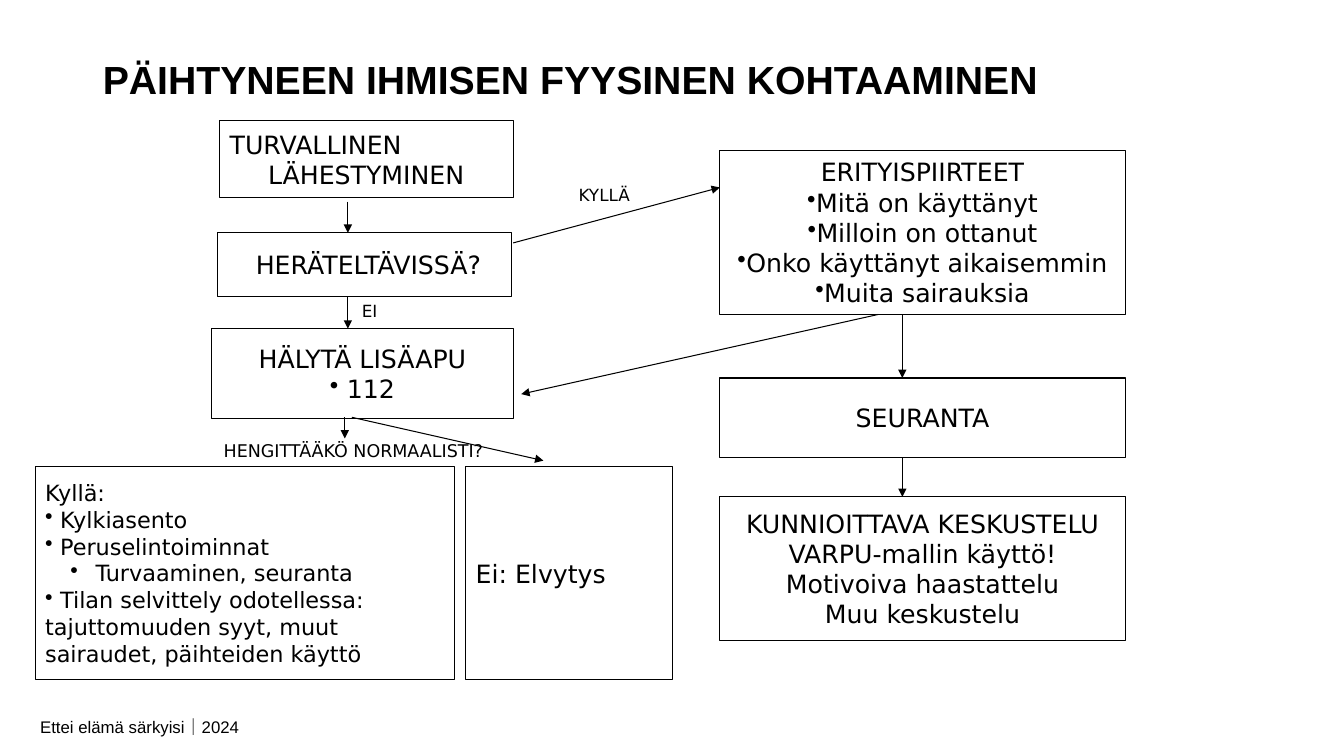
from lxml import etree
from pptx import Presentation
from pptx.dml.color import RGBColor
from pptx.enum import shapes, text
from pptx.oxml.ns import qn
from pptx.util import Inches, Pt

BLACK, WHITE = "000000", "FFFFFF"
LEFT, MID = text.PP_ALIGN.LEFT, text.PP_ALIGN.CENTER


def color(code):
    return RGBColor.from_string(code)


def style(para, size, face="DejaVu Sans", bold=False):
    for run in para.runs:
        run.font.name, run.font.size = face, Pt(size)
        run.font.bold, run.font.color.rgb = bold, color(BLACK)


def indent(para, margin, first, dot):
    props = para._p.get_or_add_pPr()
    props.set("marL", str(Inches(margin)))
    props.set("indent", str(Inches(first)))
    if dot:
        etree.SubElement(props, qn("a:buChar")).set("char", "•")


def write(frame, lines, size, align):
    """Lines starting with * get a bullet, with ** a second-level one."""
    frame.text = "\n".join(line.lstrip("*") for line in lines)
    for para, line in zip(frame.paragraphs, lines):
        para.alignment = align
        style(para, size)
        if line.startswith("**"):
            para.level = 1
            indent(para, 0.5, -0.25, True)
        elif line.startswith("*"):
            indent(para, 0, 0, True)


def box(slide, area, lines, size=18, align=MID):
    rect = slide.shapes.add_shape(shapes.MSO_SHAPE.RECTANGLE, *map(Inches, area))
    rect.shadow.inherit = False
    rect.fill.background()
    rect.line.color.rgb, rect.line.width = color(BLACK), Pt(0.75)
    frame = rect.text_frame
    frame.word_wrap = True
    frame.vertical_anchor = text.MSO_ANCHOR.MIDDLE
    write(frame, lines, size, align)
    return rect


def label(slide, area, words, size=12, face="DejaVu Sans"):
    frame = slide.shapes.add_textbox(*map(Inches, area)).text_frame
    frame.word_wrap = False
    frame.text = words
    style(frame.paragraphs[0], size, face)


def arrow(slide, x1, y1, x2, y2):
    link = slide.shapes.add_connector(
        shapes.MSO_CONNECTOR.STRAIGHT, *map(Inches, (x1, y1, x2, y2)))
    link.line.color.rgb, link.line.width = color(BLACK), Pt(0.75)
    etree.SubElement(link.line._get_or_add_ln(), qn("a:tailEnd")).set("type", "triangle")
    etree.SubElement(link._element.spPr, qn("a:effectLst"))


def heading(slide, area):
    title = slide.shapes.title
    title.left, title.top, title.width, title.height = map(Inches, area)
    frame = title.text_frame
    frame.text = "PÄIHTYNEEN IHMISEN FYYSINEN KOHTAAMINEN"
    frame.vertical_anchor = text.MSO_ANCHOR.BOTTOM
    frame.paragraphs[0].alignment = LEFT
    style(frame.paragraphs[0], 28, "Arial", True)


def rouse(slide, x, y):
    """Approach, waking and calling for help."""
    first = box(slide, (x + 0.08, y, 2.91, 0.76), ["TURVALLINEN\vLÄHESTYMINEN"], align=LEFT)
    first.fill.solid()
    first.fill.fore_color.rgb = color(WHITE)
    indent(first.text_frame.paragraphs[0], 0.38, -0.38, False)
    box(slide, (x + 0.06, y + 1.11, 2.91, 0.63), [" HERÄTELTÄVISSÄ?"])
    box(slide, (x, y + 2.06, 2.99, 0.89), ["HÄLYTÄ LISÄAPU", "* 112"])
    for top, end in ((0.8, 1.11), (1.74, 2.06)):
        arrow(slide, x + 1.35, y + top, x + 1.35, y + end)
    label(slide, (x + 1.39, y + 1.73, 0.44, 0.3), "EI")


def breath(slide, x, y):
    """Breathing check with its two outcomes."""
    label(slide, (x + 1.77, y - 0.31, 2.9, 0.31), "HENGITTÄÄKÖ NORMAALISTI?", 12.5)
    box(slide, (x, y, 4.16, 2.11),
        ["Kyllä:", "* Kylkiasento", "* Peruselintoiminnat", "**Turvaaminen, seuranta",
         "* Tilan selvittely odotellessa:\vtajuttomuuden syyt, muut\vsairaudet, päihteiden käyttö"],
        16, LEFT)
    box(slide, (x + 4.27, y, 2.05, 2.11), ["Ei: Elvytys"], align=LEFT)
    arrow(slide, x + 3.07, y - 0.49, x + 3.07, y - 0.28)
    arrow(slide, x + 3.14, y - 0.49, x + 5.04, y - 0.06)


def follow(slide, x, y, w):
    """Special features, monitoring and talk."""
    box(slide, (x, y, w, 1.63),
        ["ERITYISPIIRTEET", "*Mitä on käyttänyt", "*Milloin on ottanut",
         "*Onko käyttänyt aikaisemmin", "*Muita sairauksia"])
    box(slide, (x, y + 2.26, w, 0.79), ["SEURANTA"])
    box(slide, (x, y + 3.44, w, 1.42),
        ["KUNNIOITTAVA KESKUSTELU", "VARPU-mallin käyttö!",
         "Motivoiva haastattelu\vMuu keskustelu"])
    for top, end in ((1.63, 2.26), (3.05, 3.44)):
        arrow(slide, x + 1.81, y + top, x + 1.81, y + end)


def main():
    deck = Presentation()
    deck.slide_width, deck.slide_height = Inches(13.33), Inches(7.5)
    slide = deck.slides.add_slide(deck.slide_layouts[5])
    heading(slide, (0.92, 0.17, 10.23, 0.9))
    rouse(slide, 2.1, 1.2)
    breath(slide, 0.35, 4.63)
    follow(slide, 7.14, 1.49, 4.02)
    # Links between the columns
    arrow(slide, 5.09, 2.41, 7.14, 1.86)
    arrow(slide, 8.71, 3.12, 5.17, 3.91)
    label(slide, (5.64, 1.78, 0.72, 0.3), "KYLLÄ")
    # Footer
    label(slide, (0.3, 7.06, 4.65, 0.3), "Ettei elämä särkyisi｜2024", 12, "Arial")
    deck.save("out.pptx")


if __name__ == "__main__":
    main()
